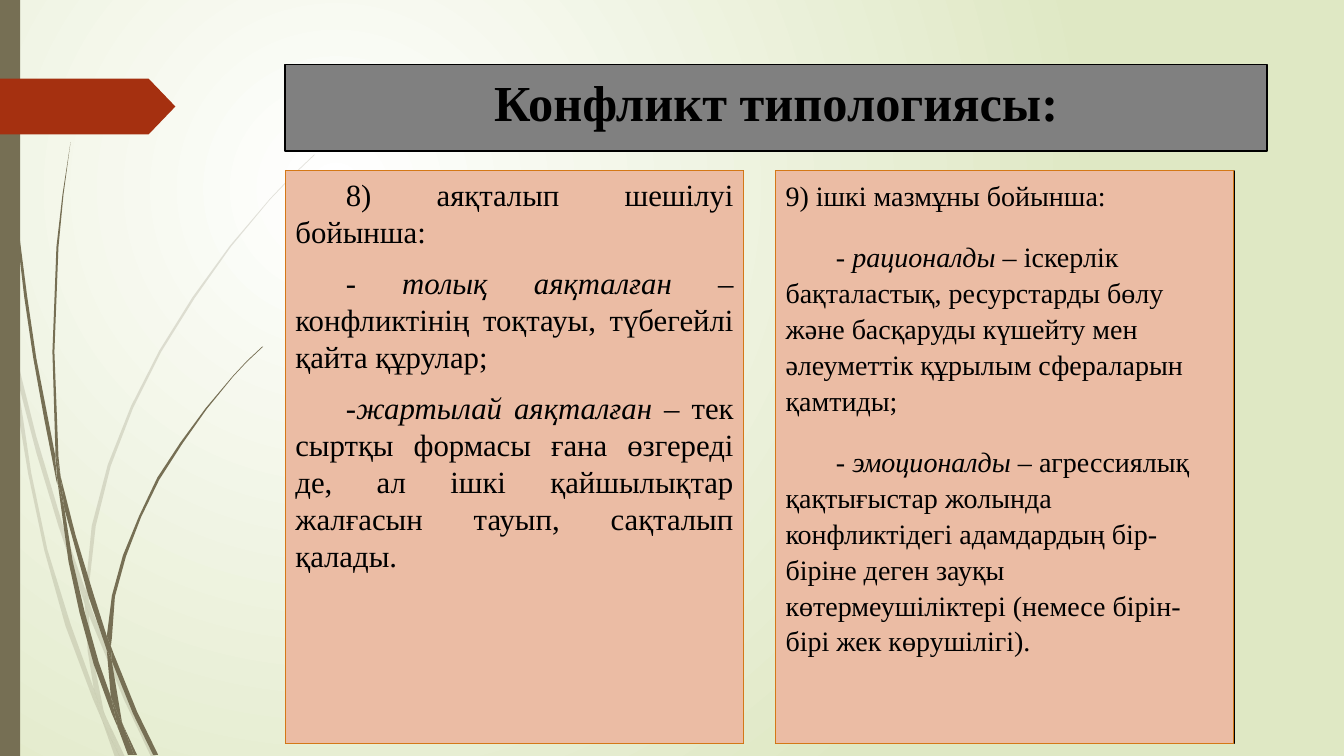
from dataclasses import dataclass

from lxml import etree
from pptx import Presentation
from pptx.dml.color import RGBColor
from pptx.enum.shapes import MSO_SHAPE
from pptx.enum.text import MSO_ANCHOR, PP_ALIGN
from pptx.oxml.ns import qn
from pptx.util import Pt

RECTANGLE = MSO_SHAPE.RECTANGLE
TAG = MSO_SHAPE.PENTAGON
TOP = MSO_ANCHOR.TOP
MIDDLE = MSO_ANCHOR.MIDDLE
LEFT = PP_ALIGN.LEFT
CENTER = PP_ALIGN.CENTER
JUSTIFY = PP_ALIGN.JUSTIFY
GRASS_UNIT = Pt(0.72)


@dataclass(frozen=True)
class Theme:
    font: str = "Times New Roman"
    ink: str = "000000"
    glow: str = "FFFFFF"
    backdrop: str = "DFE8C4"
    grass: str = "766F54"
    tag: str = "A53010"
    banner: str = "808080"
    panel: str = "EBBCA4"
    panel_edge: str = "D47817"
    title_size: int = 36
    outcome_size: int = 22
    content_size: int = 20


def write(frame, paragraphs, theme, size, align=LEFT, bold=False,
          spacing=None, before=0, after=0):
    for index, (indent, pieces) in enumerate(paragraphs):
        paragraph = frame.paragraphs[0] if index == 0 else frame.add_paragraph()
        paragraph.alignment = align
        paragraph.line_spacing = spacing
        paragraph.space_before = Pt(before if index else 0)
        paragraph.space_after = Pt(after)
        paragraph._p.get_or_add_pPr().set("indent", str(Pt(indent)))
        for words, italic in pieces:
            run = paragraph.add_run()
            run.text = words
            run.font.name = theme.font
            run.font.size = Pt(size)
            run.font.bold = bold
            run.font.italic = italic
            run.font.color.rgb = RGBColor.from_string(theme.ink)


class SlideBuilder:
    def __init__(self, slide, theme):
        self.slide = slide
        self.theme = theme

    def backdrop(self):
        fill = self.slide.background.fill
        fill.gradient()
        for stop, color in zip(fill.gradient_stops, (self.theme.glow, self.theme.backdrop)):
            stop.color.rgb = RGBColor.from_string(color)
        gradient = next(self.slide.element.iter(qn("a:gradFill")))
        gradient.remove(gradient.find(qn("a:lin")))
        circle = etree.SubElement(gradient, qn("a:path"), {"path": "circle"})
        etree.SubElement(circle, qn("a:fillToRect"),
                         {"l": "50000", "t": "50000", "r": "100000", "b": "100000"})

    def paint(self, shape, fill, edge=None, weight=0):
        shape.shadow.inherit = False
        shape.fill.solid()
        shape.fill.fore_color.rgb = RGBColor.from_string(fill)
        if edge:
            shape.line.color.rgb = RGBColor.from_string(edge)
            shape.line.width = Pt(weight)
        else:
            shape.line.fill.background()
        return shape

    def box(self, place, fill, edge=None, weight=0, kind=RECTANGLE):
        shape = self.slide.shapes.add_shape(kind, *map(Pt, place))
        return self.paint(shape, fill, edge, weight)

    def text_box(self, place, paragraphs, fill, edge, weight, anchor=TOP, bottom=3.6, **style):
        frame = self.box(place, fill, edge, weight).text_frame
        frame.word_wrap = True
        frame.vertical_anchor = anchor
        frame.margin_bottom = Pt(bottom)
        write(frame, paragraphs, self.theme, **style)

    def blade(self, corners, opacity):
        start, *rest = corners
        outline = self.slide.shapes.build_freeform(*start, scale=float(GRASS_UNIT))
        outline.add_line_segments(rest, close=True)
        shape = self.paint(outline.convert_to_shape(), self.theme.grass)
        if opacity < 100:
            color = next(shape.element.spPr.iter(qn("a:srgbClr")))
            etree.SubElement(color, qn("a:alpha"), {"val": str(opacity * 1000)})


PALE_BLADES = [
    [(11, 350), (9, 322), (0, 282), (0, 299), (10, 344)],
    [(58, 522), (84, 599), (85, 586), (62, 520), (36, 433), (14, 345), (17, 376), (36, 449)],
    [(92, 607), (88, 596), (88, 610), (123, 694), (150, 751), (155, 751), (127, 692)],
    [(119, 751), (124, 751), (105, 711)],
    [(93, 683), (70, 619), (47, 545), (31, 469), (17, 376), (11, 350), (18, 410),
     (28, 470), (44, 546), (65, 621), (92, 693), (101, 714), (99, 707)],
    [(84, 599), (87, 646), (93, 683), (96, 692), (105, 711), (103, 706), (91, 646),
     (88, 610), (88, 608)],
    [(88, 584), (95, 522), (110, 462), (132, 405), (160, 349), (193, 296), (229, 245),
     (268, 198), (290, 175), (312, 154), (312, 153), (289, 175), (268, 197), (228, 244),
     (191, 295), (158, 348), (130, 403), (107, 461), (91, 522), (85, 584), (85, 586),
     (88, 596)],
    [(101, 714), (114, 751), (119, 751)],
    [(88, 608), (88, 610), (88, 596), (85, 586), (84, 599)],
    [(96, 692), (93, 683), (99, 707), (101, 714), (119, 751), (105, 711)],
]
DARK_BLADES = [
    [(7, 110), (17, 233), (24, 294), (33, 355), (44, 416), (56, 477), (57, 481), (55, 457),
     (55, 453), (36, 355), (27, 294), (19, 232), (8, 109), (5, 48), (4, 0), (3, 0), (4, 48)],
    [(88, 592), (106, 645), (106, 633), (106, 631), (93, 590), (75, 531), (60, 472),
     (64, 505)],
    [(113, 649), (110, 641), (111, 656), (132, 708), (152, 749), (157, 749), (136, 706)],
    [(110, 691), (98, 657), (84, 607), (72, 556), (64, 505), (57, 477), (68, 557),
     (79, 608), (93, 659), (111, 708), (117, 722), (116, 717)],
    [(60, 472), (58, 453), (54, 349), (58, 245), (63, 193), (70, 141), (62, 193),
     (56, 245), (52, 349), (55, 449)],
    [(133, 749), (136, 749), (122, 719)],
    [(57, 477), (64, 505), (60, 472), (55, 449), (55, 453)],
    [(111, 633), (114, 592), (125, 552), (140, 513), (158, 476), (181, 440), (205, 406),
     (231, 374), (245, 359), (261, 344), (260, 344), (245, 358), (231, 373), (204, 405),
     (179, 439), (156, 474), (138, 512), (122, 551), (111, 591), (106, 631), (110, 641)],
    [(117, 722), (127, 749), (131, 749)],
    [(106, 645), (110, 691), (116, 706), (122, 719), (121, 716), (111, 656), (109, 651)],
    [(106, 645), (109, 651), (111, 656), (110, 641), (106, 631), (106, 633)],
    [(116, 706), (110, 691), (116, 717), (117, 722), (130, 749), (133, 749), (122, 719)],
]
TITLE = [(0, [("Конфликт типологиясы:", False)])]
BY_OUTCOME = [
    (36, [("8) аяқталып шешілуі бойынша:", False)]),
    (36, [("-", False), (" толық аяқталған – ", True),
          ("конфликтінің тоқтауы, түбегейлі қайта құрулар;", False)]),
    (36, [("-", False), ("жартылай аяқталған – ", True),
          ("тек сыртқы формасы ғана өзгереді де, ал ішкі қайшылықтар жалғасын "
           "тауып, сақталып қалады.", False)]),
]
BY_CONTENT = [
    (0, [("9) ішкі мазмұны бойынша:", False)]),
    (36, [("- ", False), ("рационалды – ", True),
          ("іскерлік бақталастық, ресурстарды бөлу және басқаруды күшейту мен "
           "әлеуметтік құрылым сфераларын қамтиды;", False)]),
    (36, [("- ", False), ("эмоционалды – ", True),
          ("агрессиялық қақтығыстар жолында конфликтідегі адамдардың бір-біріне "
           "деген зауқы көтермеушіліктері (немесе бірін-бірі жек көрушілігі).", False)]),
]


def main():
    theme = Theme()
    deck = Presentation()
    deck.slide_width, deck.slide_height = Pt(960), Pt(540)
    page = SlideBuilder(deck.slides.add_slide(deck.slide_layouts[6]), theme)
    page.backdrop()
    for blades, opacity in ((PALE_BLADES, 20), (DARK_BLADES, 100)):
        for corners in blades:
            page.blade(corners, opacity)
    page.box((0, 0, 14.4, 540), theme.grass)
    tag = page.box((0, 56.2, 125.3, 39.8), theme.tag, kind=TAG)
    tag.adjustments[0] = 0.48
    page.text_box((203.8, 46.1, 701.3, 61.9), TITLE, theme.banner, theme.ink, 1.25,
                  anchor=MIDDLE, bottom=13, size=theme.title_size, align=CENTER, bold=True)
    panels = (
        (203.9, BY_OUTCOME, {"size": theme.outcome_size, "align": JUSTIFY}),
        (554, BY_CONTENT, {"size": theme.content_size, "spacing": 1.07, "after": 8}),
    )
    for left, paragraphs, style in panels:
        place = (left, 122, 327.2, 409.2)
        page.box(place, theme.tag, theme.ink, 1.25)
        page.text_box(place, paragraphs, theme.panel, theme.panel_edge, 0.75,
                      before=10, **style)
    deck.save("out.pptx")


if __name__ == "__main__":
    main()
